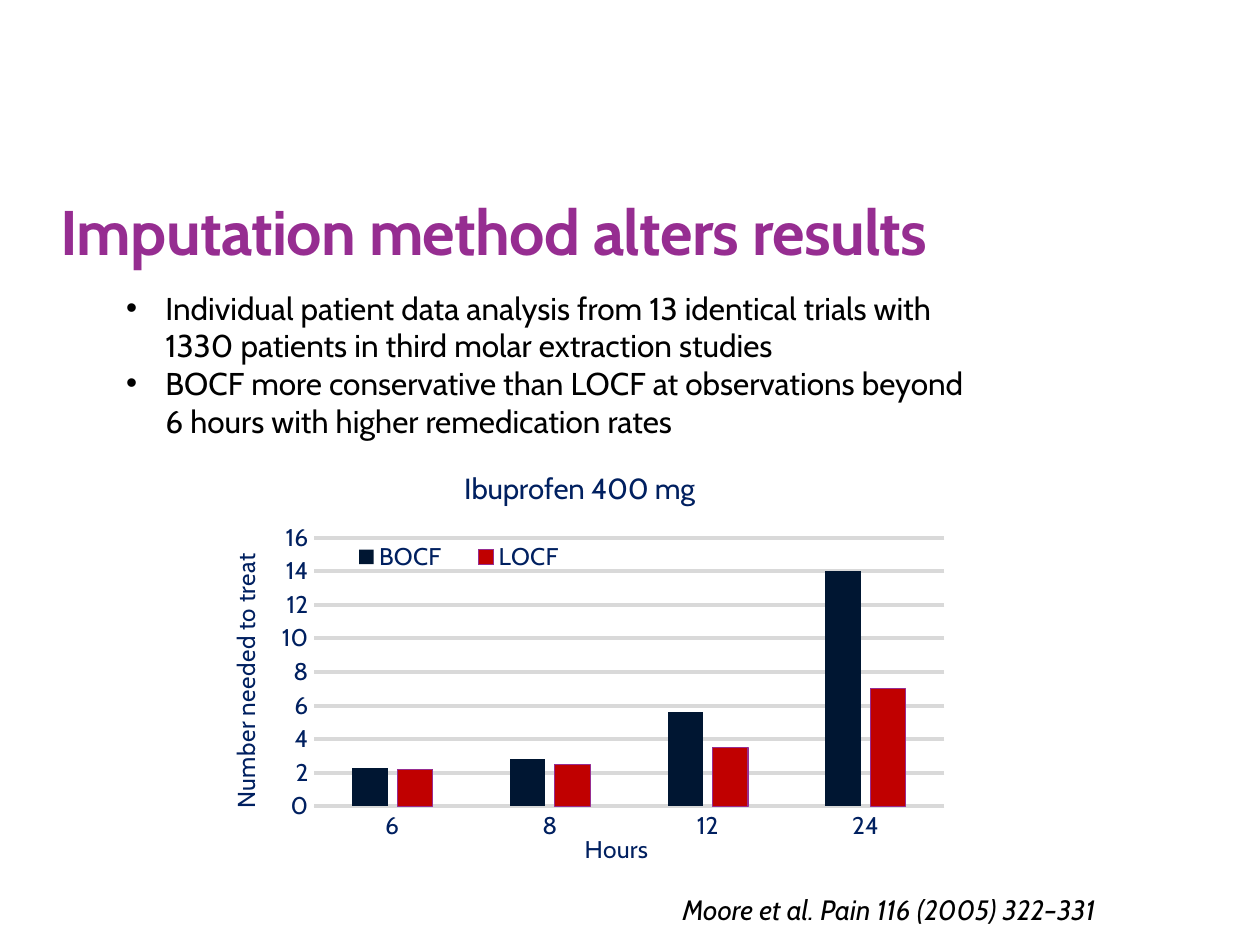
from lxml.etree import SubElement
from pptx import Presentation
from pptx.chart.data import CategoryChartData
from pptx.dml.color import RGBColor
from pptx.enum.chart import XL_CHART_TYPE, XL_LEGEND_POSITION, XL_TICK_MARK
from pptx.enum.text import MSO_ANCHOR, MSO_AUTO_SIZE, PP_ALIGN
from pptx.oxml import parse_xml
from pptx.oxml.ns import nsdecls, qn
from pptx.util import Cm, Pt

COLORS = {"purple": "962D91", "black": "000000", "blue": "002060",
          "navy": "001632", "red": "C00000", "grid": "D9D9D9"}


def color(name):
    return RGBColor.from_string(COLORS[name])


def set_layout(element, index, inner=False, **shares):
    """Place a chart part by shares of the chart's width and height."""
    for old in element.findall(qn("c:layout")):
        element.remove(old)
    layout = parse_xml(f'<c:layout {nsdecls("c")}><c:manualLayout/></c:layout>')
    settings = [("layoutTarget", "inner")] if inner else []
    settings += [("xMode", "edge"), ("yMode", "edge"), *shares.items()]
    for tag, value in settings:
        SubElement(layout[0], qn(f"c:{tag}")).set("val", str(value))
    element.insert(index, layout)


class SlideBuilder:
    font_name = "Cabin"

    def __init__(self, slide):
        self.slide = slide

    def style(self, font, size, tone, bold=False, italic=False):
        font.name, font.size = self.font_name, Pt(size)
        font.bold, font.italic = bold, italic
        font.color.rgb = color(tone)

    def place(self, shape, left, top, width, height):
        shape.left, shape.top = Cm(left), Cm(top)
        shape.width, shape.height = Cm(width), Cm(height)

    def title(self, text, *area):
        box = self.slide.shapes.title
        self.place(box, *area)
        frame = box.text_frame
        frame.auto_size = MSO_AUTO_SIZE.NONE
        frame.vertical_anchor = MSO_ANCHOR.BOTTOM
        frame.margin_left = frame.margin_right = 0
        frame.margin_top = frame.margin_bottom = 0
        para = frame.paragraphs[0]
        para.alignment = PP_ALIGN.LEFT
        span = para.add_run()
        span.text = text
        self.style(span.font, 36, "purple", bold=True)
        span.font._element.set("spc", "-40")

    def bullets(self, items, *area):
        box = self.slide.placeholders[1]
        self.place(box, *area)
        frame = box.text_frame
        frame.auto_size = MSO_AUTO_SIZE.NONE
        for index, item in enumerate(items):
            para = frame.add_paragraph() if index else frame.paragraphs[0]
            properties = para._p.get_or_add_pPr()
            properties.set("marL", str(Cm(0.79)))
            properties.set("indent", str(Cm(-0.79)))
            SubElement(properties, qn("a:buFont")).set("typeface", "Arial")
            SubElement(properties, qn("a:buChar")).set("char", "•")
            para.space_before = Pt(0)
            span = para.add_run()
            span.text = item
            self.style(span.font, 18, "black")

    def citation(self, text, *area):
        box = self.slide.shapes.add_textbox(*map(Cm, area))
        box.text_frame.word_wrap = True
        span = box.text_frame.paragraphs[0].add_run()
        span.text = text
        self.style(span.font, 16, "black", italic=True)

    def chart_title(self, title, text, size, x, y):
        span = title.text_frame.paragraphs[0].add_run()
        span.text = text
        self.style(span.font, size, "blue")
        set_layout(title._element, 1, x=x, y=y)

    def column_chart(self, categories, series, *area):
        data = CategoryChartData()
        data.categories = categories
        for name, values, _ in series:
            data.add_series(name, values)
        chart = self.slide.shapes.add_chart(
            XL_CHART_TYPE.COLUMN_CLUSTERED, *map(Cm, area), data).chart
        self.style(chart.font, 14, "blue")
        set_layout(chart._chartSpace.chart.plotArea, 0, inner=True,
                   x=0.148, y=0.225, w=0.833, h=0.635)

        # Columns
        plot = chart.plots[0]
        plot.gap_width, plot.overlap = 219, -27
        plot.vary_by_categories = False
        for columns, (_, _, tone) in zip(plot.series, series):
            columns.format.fill.solid()
            columns.format.fill.fore_color.rgb = color(tone)
        outline = plot.series[1].format.line
        outline.color.rgb, outline.width = color("purple"), Pt(0.75)

        # Axes
        hours, treated = chart.category_axis, chart.value_axis
        for axis in (hours, treated):
            axis.major_tick_mark = axis.minor_tick_mark = XL_TICK_MARK.NONE
            self.style(axis.tick_labels.font, 14, "blue")
        hours.format.line.color.rgb = color("grid")
        hours.format.line.width = Pt(0.75)
        treated.format.line.fill.background()
        treated.minimum_scale, treated.maximum_scale = 0, 16
        treated.major_unit = 2
        grid = treated.major_gridlines.format.line
        grid.color.rgb, grid.width = color("grid"), Pt(2.25)

        # Titles
        chart.has_title = True
        self.chart_title(chart.chart_title, "Ibuprofen 400 mg", 16.8, 0.34, 0.05)
        self.chart_title(hours.axis_title, "Hours", 14, 0.5, 0.91)
        self.chart_title(treated.axis_title, "Number needed to treat", 14, 0.03, 0.26)
        direction = treated.axis_title._element.find(".//" + qn("a:bodyPr"))
        direction.set("rot", "-5400000")
        direction.set("vert", "horz")

        # Legend
        chart.has_legend = True
        chart.legend.position = XL_LEGEND_POSITION.BOTTOM
        chart.legend.include_in_layout = False
        self.style(chart.legend.font, 14, "blue")
        set_layout(chart.legend._element, 1, x=0.17, y=0.22, w=0.34, h=0.1)


def main():
    deck = Presentation()
    deck.slide_width, deck.slide_height = Cm(25.4), Cm(19.05)
    page = SlideBuilder(deck.slides.add_slide(deck.slide_layouts[1]))
    page.title("Imputation method alters results", 1.22, 3.66, 19.86, 1.75)
    page.bullets([
        "Individual patient data analysis from 13 identical trials with "
        "1330 patients in third molar extraction studies",
        "BOCF more conservative than LOCF at observations beyond "
        "6 hours with higher remedication rates",
    ], 2.29, 5.69, 17.75, 4.11)
    page.column_chart(["6", "8", "12", "24"], [
        ("BOCF", (2.3, 2.8, 5.6, 14), "navy"),
        ("LOCF", (2.2, 2.5, 3.5, 7), "red"),
    ], 4.06, 8.92, 15.27, 8.66)
    page.citation("Moore et al. Pain 116 (2005) 322–331", 13.51, 17.86, 8.86, 0.94)
    deck.save("out.pptx")


if __name__ == "__main__":
    main()
